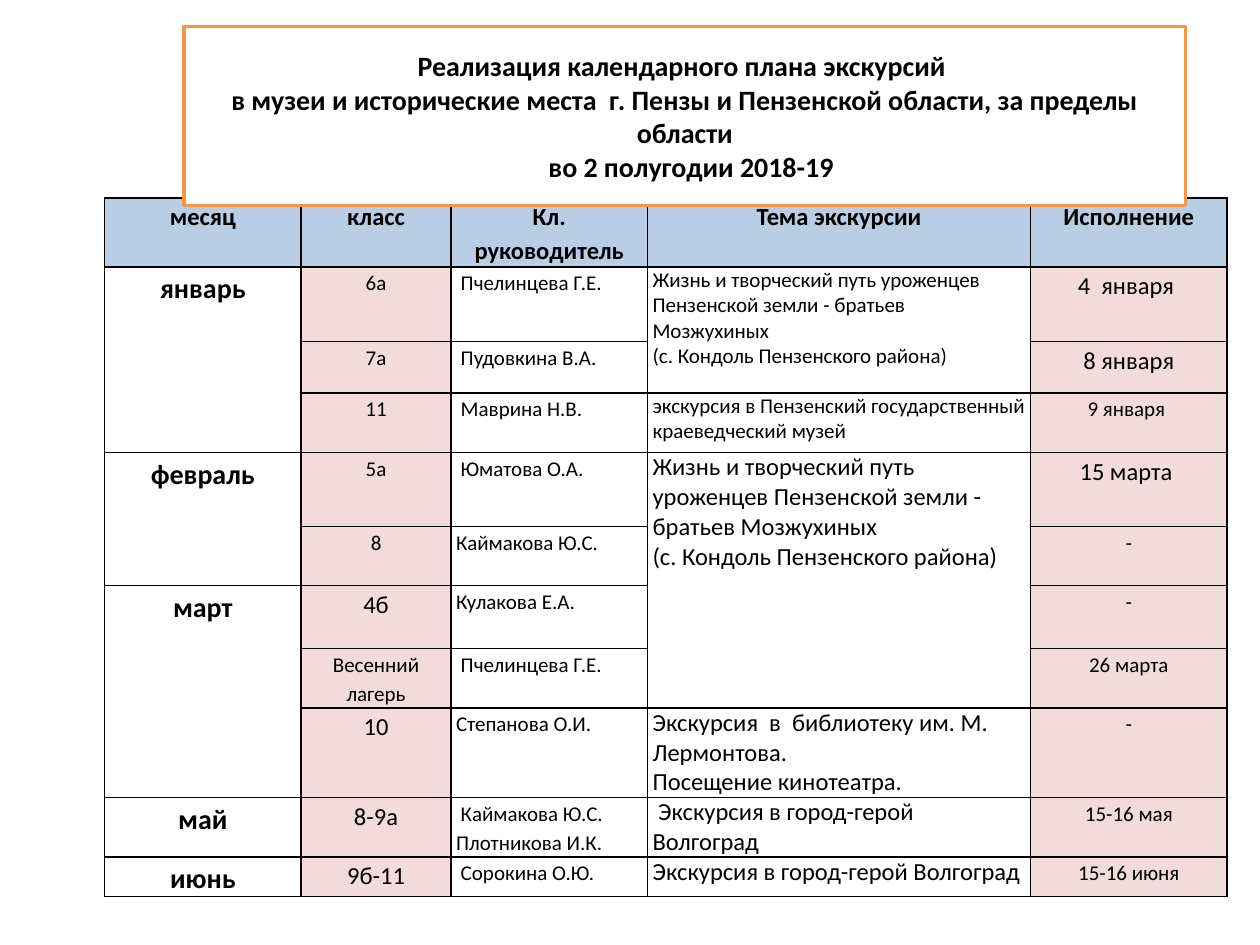
from lxml import etree
from pptx import Presentation
from pptx import util as u
from pptx.dml import color
from pptx.enum import shapes, text
from pptx.oxml import ns

TITLE = [
    "Реализация календарного плана экскурсий ",
    "в музеи и исторические места  г. Пензы и Пензенской области, за пределы области",
    "  во 2 полугодии 2018-19",
]
HEADER = ["месяц", "класс", "Кл. руководитель", "Тема экскурсии", "Исполнение"]
BROTHERS = ("Жизнь и творческий путь уроженцев Пензенской земли - братьев Мозжухиных\n"
            "(с. Кондоль Пензенского района)")
MUSEUM = "экскурсия в Пензенский государственный краеведческий музей"
LIBRARY = "Экскурсия  в  библиотеку им. М. Лермонтова.\nПосещение кинотеатра."
VOLGOGRAD = "Экскурсия в город-герой Волгоград"
TRIPS = [
    ["январь", "6а", " Пчелинцева Г.Е.", BROTHERS, "4  января "],
    [None, "7а", " Пудовкина В.А.", None, "8 января"],
    [None, "11", " Маврина Н.В.", MUSEUM, "9 января "],
    ["февраль", "5а", " Юматова О.А.", BROTHERS, "15 марта "],
    [None, "8", "Каймакова Ю.С.", None, "-"],
    ["март", "4б", "Кулакова Е.А.", None, "-"],
    [None, "Весенний лагерь", " Пчелинцева Г.Е.", None, "26 марта"],
    [None, "10", "Степанова О.И.", LIBRARY, "-"],
    ["май", "8-9а", " Каймакова Ю.С.\nПлотникова И.К.", " " + VOLGOGRAD, "15-16 мая"],
    ["июнь", "9б-11", " Сорокина О.Ю.", VOLGOGRAD, "15-16 июня"],
]
MONTH, CLASS, TEACHER, TOPIC, DONE = range(5)
LARGE_ROWS = {CLASS: {6, 8, 9, 10}, TOPIC: {4, 8, 9, 10}, DONE: {1, 2, 4}}
WIDTHS = [1.56, 1.19, 1.56, 3.04, 1.56]
HEIGHTS = [0.55, 0.59, 0.41, 0.47, 0.59, 0.47, 0.5, 0.47, 0.71, 0.47, 0.31]


def rgb(value):
    return color.RGBColor.from_string(value)


def assign(target, values):
    for name, value in values.items():
        setattr(target, name, value)


def write(frame, lines, size, bold, align, spacing):
    for index, line in enumerate(lines):
        para = frame.paragraphs[0] if index == 0 else frame.add_paragraph()
        assign(para, {"alignment": align, "line_spacing": spacing})
        span = para.add_run()
        span.text = line
        assign(span.font, {"name": "Calibri", "size": u.Pt(size), "bold": bold})
        span.font.color.rgb = rgb("000000")


def add_borders(cell):
    props = cell._tc.get_or_add_tcPr()
    for index, side in enumerate(("a:lnL", "a:lnR", "a:lnT", "a:lnB")):
        line = etree.Element(ns.qn(side), w=str(u.Pt(1)))
        fill = etree.SubElement(line, ns.qn("a:solidFill"))
        etree.SubElement(fill, ns.qn("a:srgbClr"), val="000000")
        props.insert(index, line)


def format_cell(cell, row, col):
    assign(cell, {"margin_left": u.Inches(0.04), "margin_right": u.Inches(0.04),
                  "margin_top": 0, "margin_bottom": 0})
    fill = "B9CDE5" if row == 0 else "F2DCDB" if col in (CLASS, DONE) else None
    if fill:
        cell.fill.solid()
        cell.fill.fore_color.rgb = rgb(fill)
    else:
        cell.fill.background()
    add_borders(cell)


def text_size(row, col):
    if row == 0:
        return 14
    if col == MONTH:
        return 16
    return 14 if row in LARGE_ROWS.get(col, ()) else 12


def add_schedule(page):
    rows = [HEADER] + TRIPS
    table = page.shapes.add_table(
        len(rows), len(WIDTHS), u.Inches(0.83), u.Inches(1.57),
        u.Inches(sum(WIDTHS)), u.Inches(sum(HEIGHTS))).table
    assign(table, {"first_row": False, "horz_banding": False})
    for column, width in zip(table.columns, WIDTHS):
        column.width = u.Inches(width)
    for line, height in zip(table.rows, HEIGHTS):
        line.height = u.Inches(height)
    for row, values in enumerate(rows):
        for col, value in enumerate(values):
            cell = table.cell(row, col)
            format_cell(cell, row, col)
            if value is None:
                continue
            last = row
            while last + 1 < len(rows) and rows[last + 1][col] is None:
                last += 1
            if last > row:
                cell.merge(table.cell(last, col))
            left = row > 0 and col in (TEACHER, TOPIC)
            write(cell.text_frame, value.split("\n"), text_size(row, col),
                  row == 0 or col == MONTH,
                  text.PP_ALIGN.LEFT if left else text.PP_ALIGN.CENTER,
                  1.0 if row > 0 and col == TOPIC else 1.15)


def add_title(page):
    box = page.shapes.add_shape(shapes.MSO_SHAPE.RECTANGLE, u.Inches(1.46),
                                u.Inches(0.21), u.Inches(7.95), u.Inches(1.42))
    box.shadow.inherit = False
    box.fill.solid()
    box.fill.fore_color.rgb = rgb("FFFFFF")
    box.line.color.rgb = rgb("F79646")
    box.line.width = u.Pt(2)
    assign(box.text_frame, {"word_wrap": True, "vertical_anchor": text.MSO_ANCHOR.MIDDLE})
    write(box.text_frame, TITLE, 16, True, text.PP_ALIGN.CENTER, 1.0)


def main():
    deck = Presentation()
    assign(deck, {"slide_width": u.Inches(10), "slide_height": u.Inches(7.5)})
    page = deck.slides.add_slide(deck.slide_layouts[6])
    add_schedule(page)
    add_title(page)
    deck.save("out.pptx")


if __name__ == "__main__":
    main()
